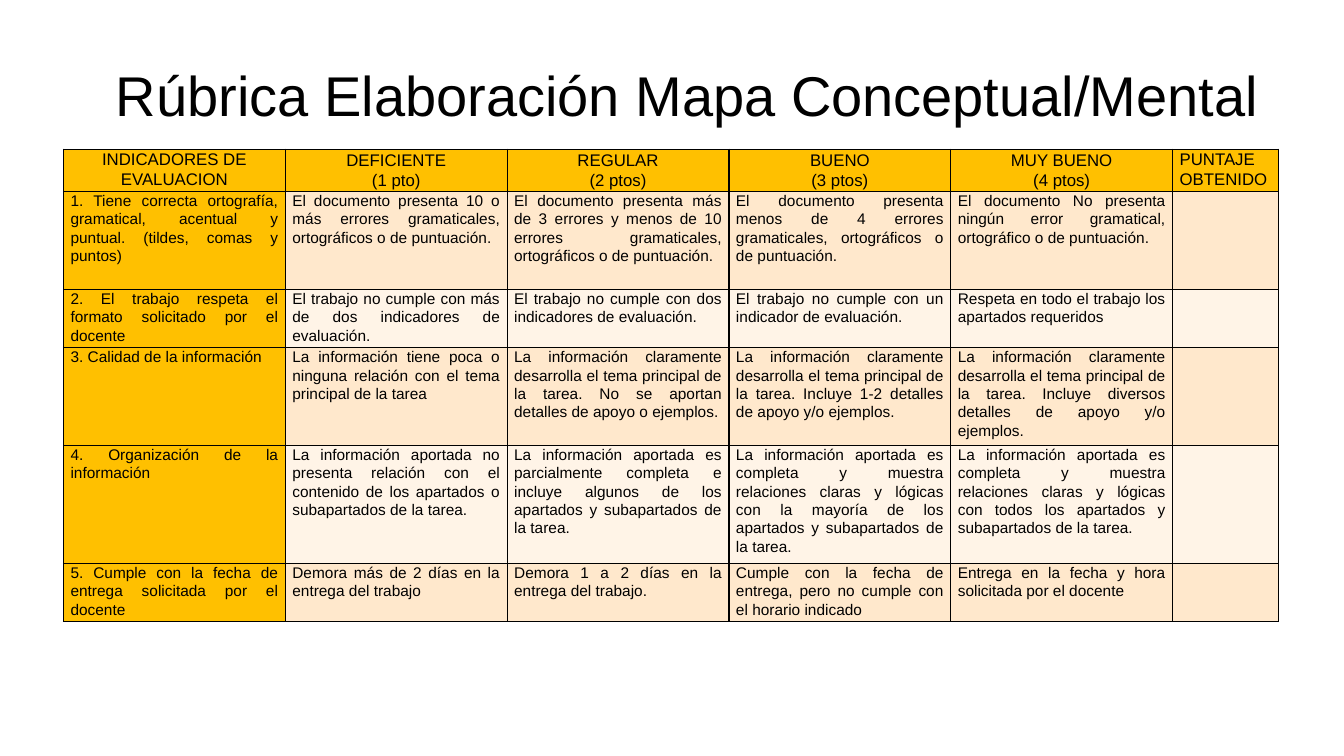
from lxml.etree import SubElement
from pptx import Presentation
from pptx.dml.color import RGBColor
from pptx.enum.text import MSO_ANCHOR, PP_ALIGN
from pptx.oxml.ns import qn
from pptx.util import Inches, Pt

TITLE = "Rúbrica Elaboración Mapa Conceptual/Mental"
HEADERS = [
    "INDICADORES DE EVALUACION",
    "DEFICIENTE\n(1 pto)",
    "REGULAR\n(2 ptos)",
    "BUENO\n(3 ptos)",
    "MUY BUENO\n(4 ptos)",
    "PUNTAJE OBTENIDO",
]
CRITERIA = [
    ["1. Tiene correcta ortografía, gramatical, acentual y puntual. (tildes, comas y puntos)",
     "El documento presenta 10 o más errores gramaticales, ortográficos o de puntuación.",
     "El documento presenta más de 3 errores y menos de 10 errores gramaticales, ortográficos o de puntuación.",
     "El documento presenta menos de 4 errores gramaticales, ortográficos o de puntuación.",
     "El documento No presenta ningún error gramatical, ortográfico o de puntuación.",
     ""],
    ["2. El trabajo respeta el formato solicitado por el docente",
     "El trabajo no cumple con más de dos indicadores de evaluación.",
     "El trabajo no cumple con dos indicadores de evaluación.",
     "El trabajo no cumple con un indicador de evaluación.",
     "Respeta en todo el trabajo los apartados requeridos",
     ""],
    ["3. Calidad de la información",
     "La información tiene poca o ninguna relación con el tema principal de la tarea",
     "La información claramente desarrolla el tema principal de la tarea. No se aportan detalles de apoyo o ejemplos.",
     "La información claramente desarrolla el tema principal de la tarea. Incluye 1-2 detalles de apoyo y/o ejemplos.",
     "La información claramente desarrolla el tema principal de la tarea. Incluye diversos detalles de apoyo y/o ejemplos.",
     ""],
    ["4. Organización de la información",
     "La información aportada no presenta relación con el contenido de los apartados o subapartados de la tarea.",
     "La información aportada es parcialmente completa e incluye algunos de los apartados y subapartados de la tarea.",
     "La información aportada es completa y muestra relaciones claras y lógicas con la mayoría de los apartados y subapartados de la tarea.",
     "La información aportada es completa y muestra relaciones claras y lógicas con todos los apartados y subapartados de la tarea.",
     ""],
    ["5. Cumple con la fecha de entrega solicitada por el docente",
     "Demora más de 2 días en la entrega del trabajo",
     "Demora 1 a 2 días en la entrega del trabajo.",
     "Cumple con la fecha de entrega, pero no cumple con el horario indicado",
     "Entrega en la fecha y hora solicitada por el docente",
     ""],
]
COL_WIDTHS = [2.2] * 5 + [1.05]
ROW_HEIGHTS = [0.42, 0.97, 0.58, 0.97, 1.17, 0.58]
THEME = {
    "font": "Arial", "text": "000000", "border": "000000",
    "accent": "FFC000", "bands": ["FFF4E7", "FFE8CC"],
    "title": 40, "header": 12, "body": 11, "border_width": 1,
}


def set_attrs(target, values):
    for name, value in values.items():
        setattr(target, name, value)


def format_paragraph(p, size, align, spacing):
    set_attrs(p, {"alignment": align, "line_spacing": spacing})
    set_attrs(p.font, {"name": THEME["font"], "size": Pt(size)})
    p.font.color.rgb = RGBColor.from_string(THEME["text"])


def add_borders(cell):
    tcPr = cell._tc.get_or_add_tcPr()
    for i, side in enumerate(("lnL", "lnR", "lnT", "lnB")):
        ln = SubElement(tcPr, qn(f"a:{side}"), w=str(Pt(THEME["border_width"])))
        fill = SubElement(ln, qn("a:solidFill"))
        SubElement(fill, qn("a:srgbClr"), val=THEME["border"])
        tcPr.remove(ln)
        tcPr.insert(i, ln)


def fill_cell(cell, text, row, col):
    header = row == 0
    scored = header and 0 < col < len(HEADERS) - 1
    if not header:
        align = PP_ALIGN.JUSTIFY
    elif col == len(HEADERS) - 1:
        align = PP_ALIGN.LEFT
    else:
        align = PP_ALIGN.CENTER
    set_attrs(cell, {
        "text": text,
        "margin_left": Inches(0.07), "margin_right": Inches(0.07),
        "margin_top": 0, "margin_bottom": 0,
        "vertical_anchor": MSO_ANCHOR.MIDDLE if scored else MSO_ANCHOR.TOP,
    })
    for p in cell.text_frame.paragraphs:
        format_paragraph(p, THEME["header" if header else "body"], align, 1.07)
    color = THEME["accent"] if header or col == 0 else THEME["bands"][row % 2]
    cell.fill.solid()
    cell.fill.fore_color.rgb = RGBColor.from_string(color)
    add_borders(cell)


def add_title(s):
    title = s.shapes.title
    set_attrs(title, {"left": Inches(1.05), "top": Inches(0.25),
                      "width": Inches(12.28), "height": Inches(1.45)})
    tf = title.text_frame
    set_attrs(tf, {"text": TITLE, "word_wrap": True,
                   "vertical_anchor": MSO_ANCHOR.MIDDLE})
    format_paragraph(tf.paragraphs[0], THEME["title"], PP_ALIGN.LEFT, 0.9)


def add_rubric(s):
    rows = [HEADERS] + CRITERIA
    table = s.shapes.add_table(
        len(rows), len(HEADERS), Inches(0.63), Inches(1.48),
        Inches(sum(COL_WIDTHS)), Inches(sum(ROW_HEIGHTS))).table
    for column, width in zip(table.columns, COL_WIDTHS):
        column.width = Inches(width)
    for row, height in zip(table.rows, ROW_HEIGHTS):
        row.height = Inches(height)
    for i, texts in enumerate(rows):
        for j, text in enumerate(texts):
            fill_cell(table.cell(i, j), text, i, j)


def main():
    prs = Presentation()
    set_attrs(prs, {"slide_width": Inches(13.33), "slide_height": Inches(7.5)})
    s = prs.slides.add_slide(prs.slide_layouts[5])
    add_title(s)
    add_rubric(s)
    prs.save("out.pptx")


if __name__ == "__main__":
    main()
